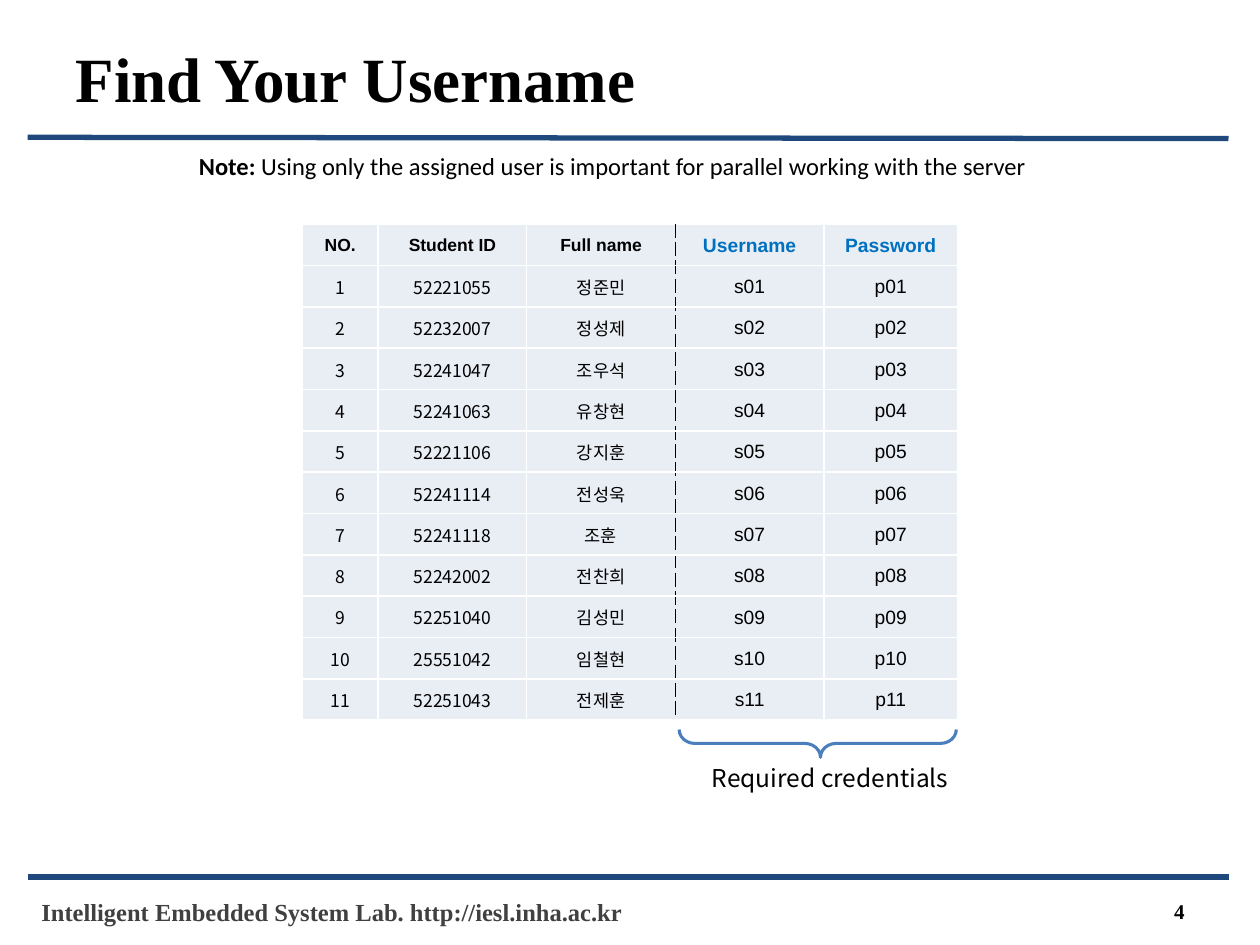
from dataclasses import dataclass

from lxml.etree import SubElement
from pptx import Presentation
from pptx.dml.color import RGBColor
from pptx.enum.shapes import MSO_CONNECTOR as Connector, MSO_SHAPE as Shape
from pptx.enum.text import MSO_ANCHOR as Anchor, PP_ALIGN as Align
from pptx.oxml.ns import qn
from pptx.util import Inches, Pt

COLORS = {"black": "000000", "white": "FFFFFF", "rule": "1F497D", "footer": "404040",
          "cell": "E9EDF4", "accent": "0070C0", "brace": "4B7EBC"}
SERIF, SANS, NOTE, KOREAN = "Times New Roman", "Arial", "Calibri", "Noto Sans CJK KR"
GRID_COLS, GRID_ROWS = 100, 75
CELL = Inches(0.1)

COL_WIDTHS = [6, 11.8, 11.8, 11.8, 10.6]
ROW_HEIGHT = 3.28
CREDENTIALS_COL = 3
HEADERS = ["NO.", "Student ID", "Full name", "Username", "Password"]
STUDENTS = [("52221055", "정준민"), ("52232007", "정성제"), ("52241047", "조우석"),
            ("52241063", "유창현"), ("52221106", "강지훈"), ("52241114", "전성욱"),
            ("52241118", "조훈"), ("52242002", "전찬희"), ("52251040", "김성민"),
            ("25551042", "임철현"), ("52251043", "전제훈")]


@dataclass(frozen=True)
class Box:
    """A rectangle in grid columns and rows."""
    col: float
    row: float
    cols: float
    rows: float

    def emu(self) -> list[int]:
        return [grid(n) for n in (self.col, self.row, self.cols, self.rows)]


@dataclass(frozen=True)
class Rule:
    start_row: float
    end_row: float


@dataclass(frozen=True)
class Label:
    text: str
    box: Box
    font: str
    size: float = 14
    color: str = "black"
    bold: bool = False
    lead: str = ""
    align: Align = Align.LEFT
    anchor: Anchor = Anchor.TOP
    wrap: bool = True


RULES = [Rule(69.6, 69.6), Rule(10.9, 11)]
LABELS = [
    Label("Intelligent Embedded System Lab. http://iesl.inha.ac.kr", Box(2.3, 70.7, 50, 3.4),
          SERIF, color="footer", bold=True),
    Label("4", Box(71.7, 70.7, 23.3, 3.2), SERIF, size=12, bold=True,
          align=Align.RIGHT, anchor=Anchor.MIDDLE),
    Label("Using only the assigned user is important for parallel working with the server",
          Box(14.8, 11.5, 68.2, 3.4), NOTE, lead="Note: ", wrap=False),
    Label("Required credentials", Box(55.5, 60.1, 20.9, 3.4), KOREAN, wrap=False),
]


def grid(n: float) -> int:
    return round(n * CELL)


def rgb(name: str) -> RGBColor:
    return RGBColor.from_string(COLORS[name])


def add_run(p, text: str, *, font: str, size: float, color: str = "black",
            bold: bool = False) -> None:
    r = p.add_run()
    r.text = text
    r.font.name, r.font.size, r.font.bold = font, Pt(size), bold
    r.font.color.rgb = rgb(color)
    SubElement(r.font._element, qn("a:ea"), typeface=KOREAN)


def add_label(s, label: Label) -> None:
    tf = s.shapes.add_textbox(*label.box.emu()).text_frame
    tf.word_wrap, tf.vertical_anchor = label.wrap, label.anchor
    p = tf.paragraphs[0]
    p.alignment = label.align
    if label.lead:
        add_run(p, label.lead, font=label.font, size=label.size, color=label.color, bold=True)
    add_run(p, label.text, font=label.font, size=label.size, color=label.color, bold=label.bold)


def add_rule(s, rule: Rule) -> None:
    line = s.shapes.add_connector(Connector.STRAIGHT, grid(2.2), grid(rule.start_row),
                                  grid(97.5), grid(rule.end_row))
    line.line.color.rgb, line.line.width = rgb("rule"), Pt(3)
    SubElement(line._element.spPr, qn("a:effectLst"))


def set_title(s, text: str) -> None:
    title = s.shapes.title
    title.left, title.top, title.width, title.height = Box(5, 2.2, 90, 7.9).emu()
    title.text_frame.vertical_anchor = Anchor.MIDDLE
    p = title.text_frame.paragraphs[0]
    p.alignment = Align.LEFT
    add_run(p, text, font=SERIF, size=36, bold=True)


def set_borders(cell, dashed_side: str) -> None:
    """Draw white borders, with a black dashed one on the named side."""
    tc_pr = cell._tc.get_or_add_tcPr()
    for side in "LRTB":
        dashed = side == dashed_side
        ln = SubElement(tc_pr, qn(f"a:ln{side}"), w=str(Pt(0.5 if dashed else 1)))
        fill = SubElement(ln, qn("a:solidFill"))
        SubElement(fill, qn("a:srgbClr"), val=COLORS["black" if dashed else "white"])
        SubElement(ln, qn("a:prstDash"), val="lgDash" if dashed else "solid")


def format_cell(cell, text: str, row: int, col: int) -> None:
    header, credential = row == 0, col >= CREDENTIALS_COL
    set_borders(cell, {CREDENTIALS_COL - 1: "R", CREDENTIALS_COL: "L"}.get(col, ""))
    cell.fill.solid()
    cell.fill.fore_color.rgb = rgb("cell")
    cell.vertical_anchor = Anchor.MIDDLE
    cell.margin_left = cell.margin_right = cell.margin_top = Inches(0.01)
    cell.margin_bottom = 0
    p = cell.text_frame.paragraphs[0]
    p.alignment = Align.CENTER
    add_run(p, text, font=SANS if header or col >= 2 else KOREAN,
            size=11 if credential else 10, bold=header,
            color="accent" if header and credential else "black")


def add_user_table(s) -> None:
    rows = [HEADERS] + [[str(n), student_id, name, f"s{n:02}", f"p{n:02}"]
                        for n, (student_id, name) in enumerate(STUDENTS, 1)]
    box = Box(24, 17.8, sum(COL_WIDTHS), ROW_HEIGHT * len(rows))
    table = s.shapes.add_table(len(rows), len(HEADERS), *box.emu()).table
    for column, width in zip(table.columns, COL_WIDTHS):
        column.width = grid(width)
    for i, values in enumerate(rows):
        table.rows[i].height = grid(ROW_HEIGHT)
        for j, text in enumerate(values):
            format_cell(table.cell(i, j), text, i, j)


def add_brace(s) -> None:
    """Add the brace that opens upwards under the credential columns."""
    brace = s.shapes.add_shape(Shape.RIGHT_BRACE, *Box(63.8, 48, 2.2, 22).emu())
    brace.rotation = 270
    brace._element.spPr.xfrm.set("flipH", "1")
    brace.adjustments[0], brace.adjustments[1] = 0.57, 0.51
    brace.shadow.inherit = False
    brace.fill.background()
    brace.line.color.rgb, brace.line.width = rgb("brace"), Pt(1.75)


def main() -> None:
    prs = Presentation()
    prs.slide_width, prs.slide_height = GRID_COLS * CELL, GRID_ROWS * CELL
    s = prs.slides.add_slide(prs.slide_layouts[5])
    for rule in RULES:
        add_rule(s, rule)
    set_title(s, "Find Your Username")
    add_user_table(s)
    add_brace(s)
    for label in LABELS:
        add_label(s, label)
    prs.save("out.pptx")


if __name__ == "__main__":
    main()
